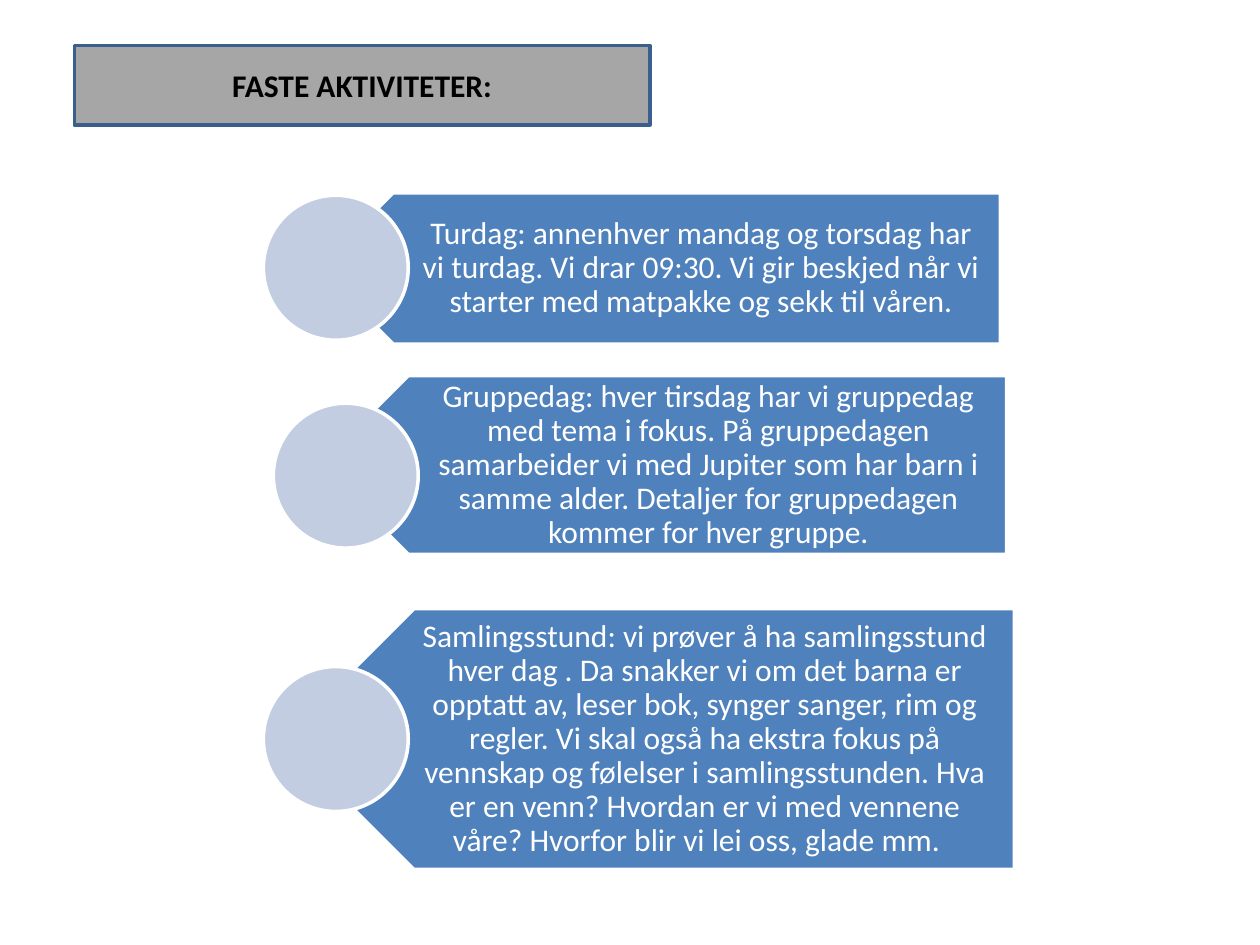
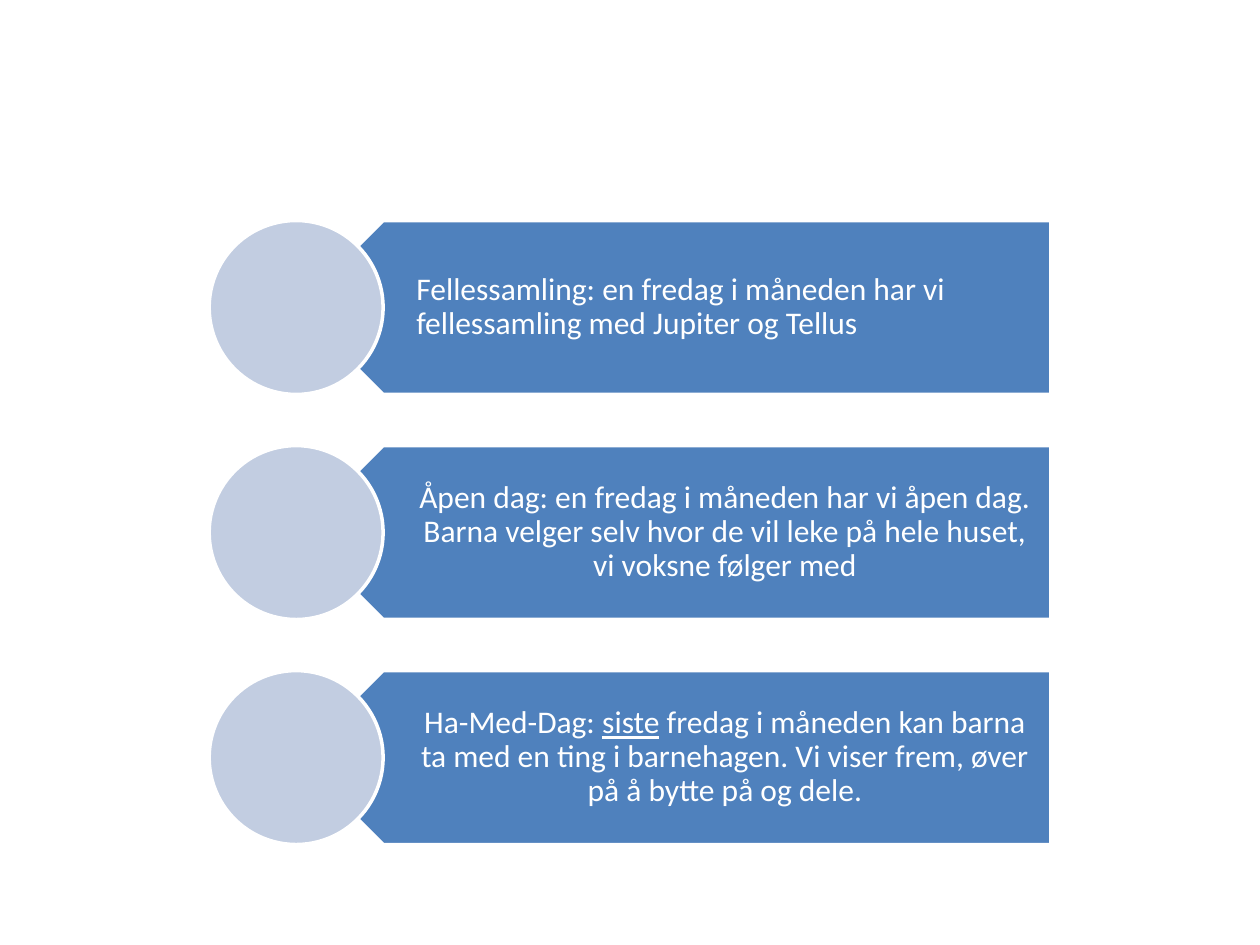
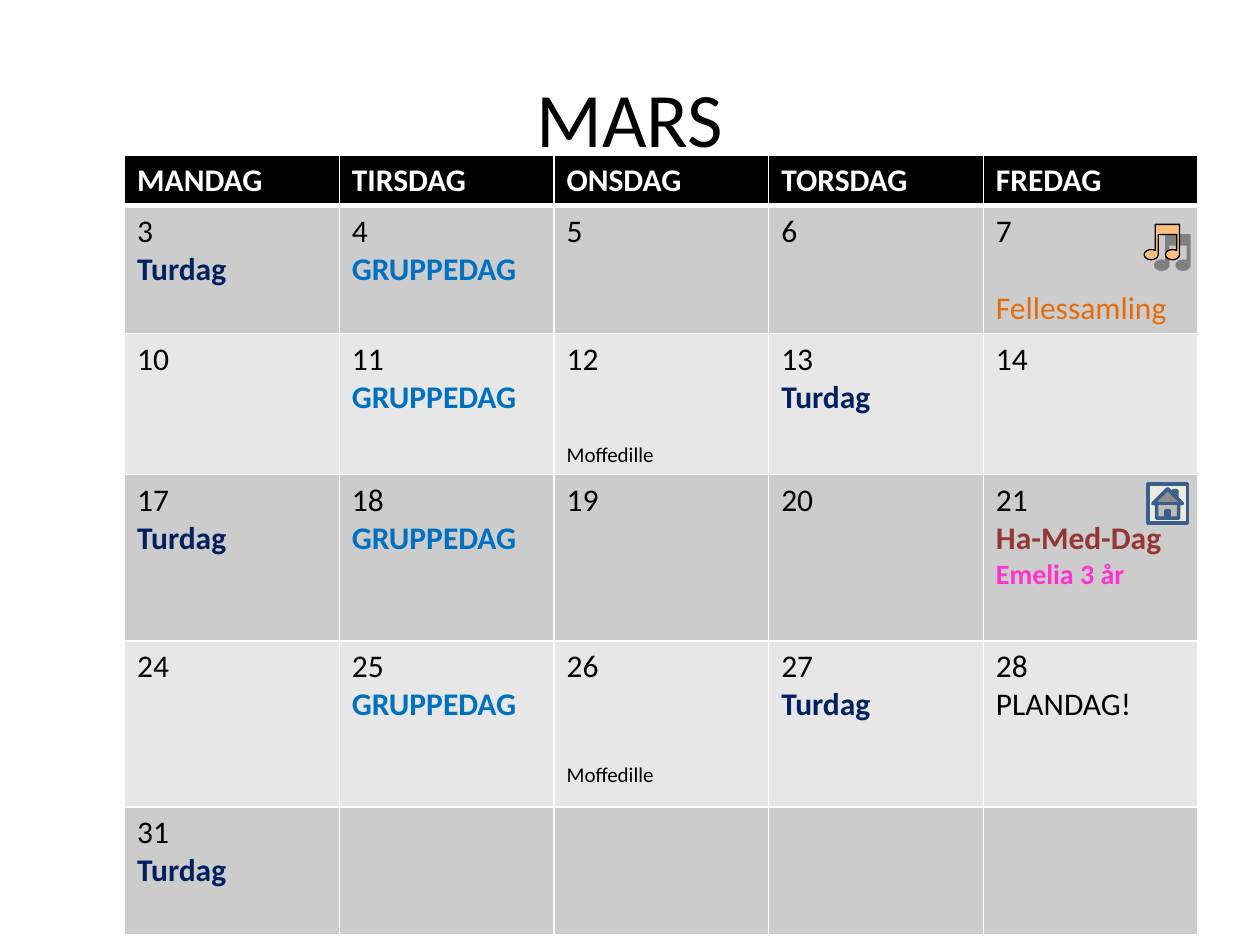
import math
from lxml import etree
from pptx import Presentation
from pptx import util as u
from pptx.dml.color import RGBColor
from pptx.enum import shapes, text
from pptx.oxml import parse_xml
from pptx.oxml.ns import nsdecls, qn

Pt = u.Pt
C = {"blue": "4F81BD", "pale": "C2CDE1", "white": "FFFFFF", "black": "000000",
     "gray": "A6A6A6", "edge": "3A5F8C", "band1": "CCCCCC", "band2": "E7E7E7",
     "navy": "002060", "sky": "0070C0", "orange": "E46C0A", "red": "953735",
     "pink": "FF33CC", "peach": "FFBE7D", "cream": "EEECE1", "shade": "808080"}
FONT = "Calibri"
CENTER, LEFT = text.PP_ALIGN.CENTER, text.PP_ALIGN.LEFT
SHAPE = shapes.MSO_SHAPE


def style(sp, fill, line, width):
    sp.shadow.inherit = False
    sp.fill.solid()
    sp.fill.fore_color.rgb = RGBColor.from_string(C[fill])
    sp.line.color.rgb = RGBColor.from_string(C[line])
    sp.line.width = Pt(width)


def add_run(p, words, size, color, bold=False, underline=False):
    r = p.add_run()
    r.text = words
    r.font.name = FONT
    r.font.size = Pt(size)
    r.font.bold = bold
    r.font.underline = underline
    r.font.color.rgb = RGBColor.from_string(C[color])


prs = Presentation()
prs.slide_width, prs.slide_height = Pt(720), Pt(540)
blank = prs.slide_layouts[6]

fixed = [
    (181.4, 110.2, 390.2, 86.4, 150.5, 111.6, 82.8, 36.7, CENTER,
     ["Turdag: annenhver mandag og torsdag har vi turdag. Vi drar 09:30. "
      "Vi gir beskjed når vi starter med matpakke og sekk til våren."]),
    (182.2, 214.6, 393.1, 102.2, 156.2, 230.4, 82.8, 36.7, CENTER,
     ["Gruppedag: hver tirsdag har vi gruppedag med tema i fokus. På gruppedagen "
      "samarbeider vi med Jupiter som har barn i samme alder. "
      "Detaljer for gruppedagen kommer for hver gruppe."]),
    (162, 347.8, 417.6, 149, 150.5, 380.9, 82.8, 36.7, CENTER,
     ["Samlingsstund: vi prøver å ha samlingsstund hver dag . Da snakker vi om det "
      "barna er opptatt av, leser bok, synger sanger, rim og regler. Vi skal også ha "
      "ekstra fokus på vennskap og følelser i samlingsstunden. Hva er en venn? "
      "Hvordan er vi med vennene våre? Hvorfor blir vi lei oss, glade mm. \t"]),
]
fridays = [
    (LEFT, ["Fellessamling: en fredag i måneden har vi fellessamling med Jupiter og Tellus"]),
    (CENTER, ["Åpen dag: en fredag i måneden har vi åpen dag. Barna velger selv hvor de "
              "vil leke på hele huset, vi voksne følger med"]),
    (CENTER, ["Ha-Med-Dag: ", "siste", " fredag i måneden kan barna ta med en ting i "
              "barnehagen. Vi viser frem, øver på å bytte på og dele."]),
]
monthly = [(169.2, 126 + 128.6 * i, 431.3, 99.4, 119.5, 126 + 128.6 * i, 99.4, 43.9, align, runs)
           for i, (align, runs) in enumerate(fridays)]

for rows in (fixed, monthly):
    s = prs.slides.add_slide(blank)
    for x, y, w, h, cx, cy, d, inset, align, runs in rows:
        sp = s.shapes.add_shape(SHAPE.PENTAGON, Pt(x), Pt(y), Pt(w), Pt(h))
        sp.rotation = 180
        style(sp, "blue", "white", 2)

        tb = s.shapes.add_textbox(Pt(x + h / 4), Pt(y), Pt(w - h / 4), Pt(h))
        tf = tb.text_frame
        tf.word_wrap = True
        tf.vertical_anchor = text.MSO_ANCHOR.MIDDLE
        tf.margin_left, tf.margin_right = Pt(inset), Pt(10)
        tf.margin_top = tf.margin_bottom = Pt(5)
        p = tf.paragraphs[0]
        p.alignment = align
        p.line_spacing = 0.9
        for i, words in enumerate(runs):
            add_run(p, words, 18, "white", underline=i == 1)

        sp = s.shapes.add_shape(SHAPE.OVAL, Pt(cx), Pt(cy), Pt(d), Pt(d))
        style(sp, "pale", "white", 2)

s = prs.slides[0]
sp = s.shapes.add_shape(SHAPE.RECTANGLE, Pt(42.5), Pt(26), Pt(329), Pt(45.4))
style(sp, "gray", "edge", 2)
sp.text_frame.vertical_anchor = text.MSO_ANCHOR.MIDDLE
p = sp.text_frame.paragraphs[0]
p.alignment = CENTER
add_run(p, "FASTE AKTIVITETER:", 18, "black", True)

s = prs.slides.add_slide(blank)
tb = s.shapes.add_textbox(Pt(36), Pt(21.6), Pt(648), Pt(90))
tf = tb.text_frame
tf.word_wrap = True
tf.vertical_anchor = text.MSO_ANCHOR.MIDDLE
p = tf.paragraphs[0]
p.alignment = CENTER
add_run(p, "MARS", 44, "black")

days = ["MANDAG", "TIRSDAG", "ONSDAG", "TORSDAG", "FREDAG"]
trip = ("Turdag", 18, "navy", True, 0)
group = ("GRUPPEDAG", 18, "sky", True, 0)
events = {
    3: [trip], 13: [trip], 17: [trip], 27: [trip], 31: [trip],
    4: [group], 11: [group], 18: [group], 25: [group],
    7: [("Fellessamling", 18, "orange", False, 22)],
    12: [("Moffedille", 12, "black", False, 36.6)],
    21: [("Ha-Med-Dag", 18, "red", True, 0), ("Emelia 3 år", 16, "pink", True, 0)],
    26: [("Moffedille", 12, "black", False, 44)],
    28: [("PLANDAG!", 18, "black", False, 0)],
}
heights = [29, 73.1, 80.6, 94.9, 94.9, 73.1]
tbl = s.shapes.add_table(6, 5, Pt(71.2), Pt(88.6), Pt(613.5), Pt(sum(heights))).table
for col in tbl.columns:
    col.width = Pt(122.7)
for i, height in enumerate(heights):
    tbl.rows[i].height = Pt(height)
    for j, day in enumerate(days):
        cell = tbl.cell(i, j)
        date = 3 + 7 * (i - 1) + j
        if i == 0:
            lines, fill = [(day, 18, "white", True, 0)], "black"
        else:
            lines = [(str(date), 18, "black", False, 0)] + events.get(date, [])
            fill = "band1" if i % 2 else "band2"
        if date > 31:
            lines = []
        tcPr = cell._tc.get_or_add_tcPr()
        for side in "LRTB":
            thick = (i, side) in ((0, "B"), (1, "T"))
            ln = etree.SubElement(tcPr, qn("a:ln" + side), w=str(Pt(3 if thick else 1)))
            paint = etree.SubElement(ln, qn("a:solidFill"))
            etree.SubElement(paint, qn("a:srgbClr"), val=C["white"])
        cell.fill.solid()
        cell.fill.fore_color.rgb = RGBColor.from_string(C[fill])
        tf = cell.text_frame
        for k, (words, size, color, bold, gap) in enumerate(lines):
            p = tf.add_paragraph() if k else tf.paragraphs[0]
            p.space_before = Pt(gap)
            add_run(p, words, size, color, bold)

note_x, note_y = 653.8, 128.2
heads = [[(cx + 4 * math.cos(math.radians(a)), 17.3 + 2.9 * math.sin(math.radians(a)))
          for a in range(-54, -361, -18)] for cx in (4, 16.2)]
outline = [(6.4, 0)] + heads[0] + [(8, 5.8), (18.6, 5.8)] + heads[1] + [(20.2, 0)]
points = [(Pt(note_x + x), Pt(note_y + y)) for x, y in outline]
fb = s.shapes.build_freeform(*points[0])
fb.add_line_segments(points[1:], close=True)
note = fb.convert_to_shape()
style(note, "peach", "black", 0.75)
note._element.spPr.find(qn("a:effectLst")).append(parse_xml(
    f'<a:outerShdw {nsdecls("a")} dist="{Pt(8.5)}" dir="2700000" algn="ctr" rotWithShape="0">'
    f'<a:srgbClr val="{C["shade"]}"/></a:outerShdw>'))

sp = s.shapes.add_shape(SHAPE.ACTION_BUTTON_HOME, Pt(656), Pt(276.5), Pt(22.5), Pt(22.5))
style(sp, "cream", "edge", 2)

prs.save("out.pptx")
